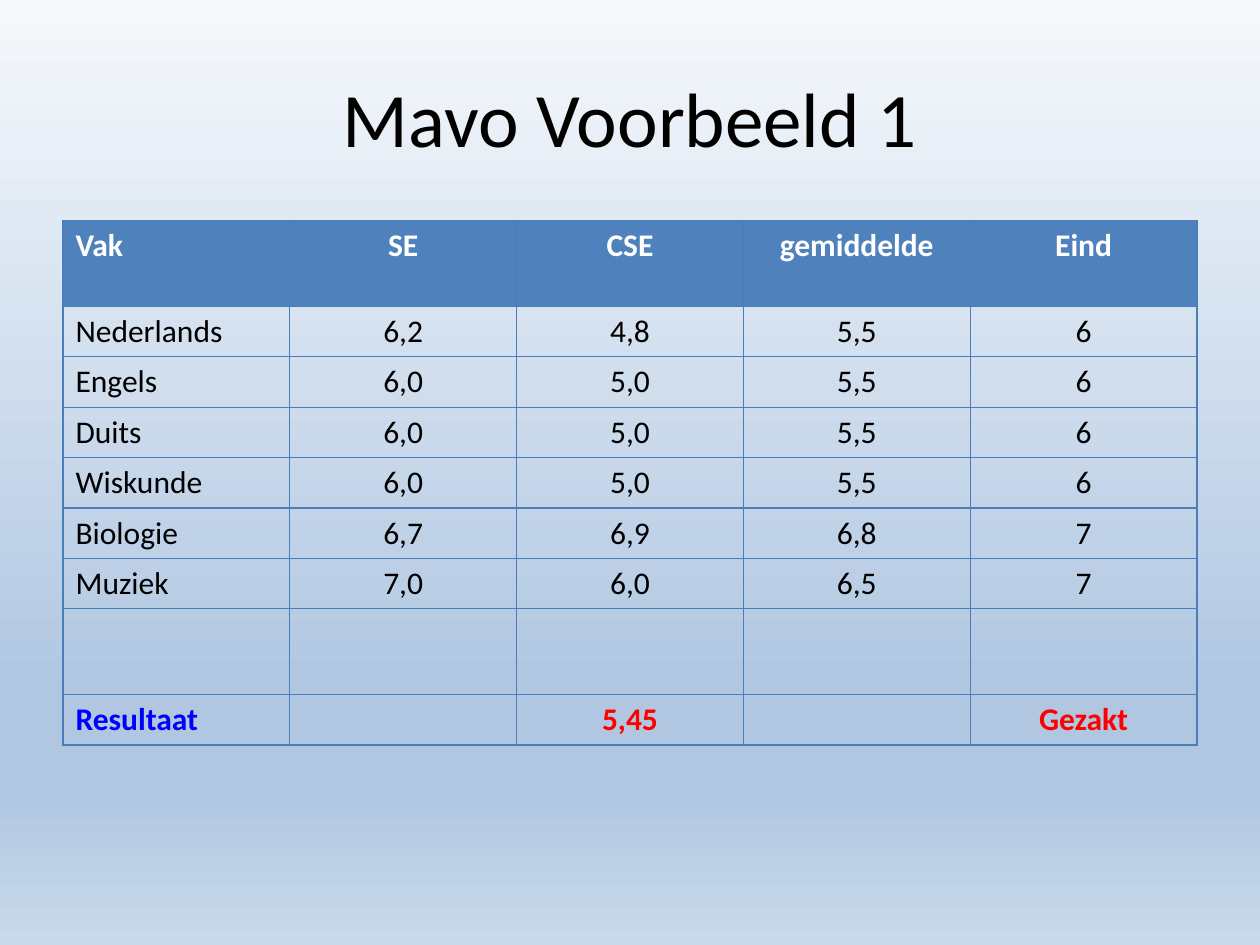
from lxml import etree
from pptx import Presentation
from pptx.dml.color import RGBColor
from pptx.enum.text import MSO_ANCHOR, PP_ALIGN
from pptx.oxml.ns import qn
from pptx.util import Inches, Pt

CENTER, LEFT = PP_ALIGN.CENTER, PP_ALIGN.LEFT
MIDDLE = MSO_ANCHOR.MIDDLE

COLORS = {
    "text": "000000",
    "header_text": "FFFFFF",
    "header_fill": "4F81BD",
    "border": "4A7EBB",
    "label": "0000FF",
    "result": "FF0000",
}
BACKGROUND_STOPS = [(0, "F6F9FC"), (74, "B0C6E1"), (83, "B0C6E1"), (100, "CAD9EB")]

GRADES = [
    ["Vak", "SE", "CSE", "gemiddelde", "Eind"],
    ["Nederlands", "6,2", "4,8", "5,5", "6"],
    ["Engels", "6,0", "5,0", "5,5", "6"],
    ["Duits", "6,0", "5,0", "5,5", "6"],
    ["Wiskunde", "6,0", "5,0", "5,5", "6"],
    ["Biologie", "6,7", "6,9", "6,8", "7"],
    ["Muziek", "7,0", "6,0", "6,5", "7"],
    ["", "", "", "", ""],
    ["Resultaat", "", "5,45", "", "Gezakt"],
]
HEADER_ROW, SPACER_ROW, RESULT_ROW = 0, 7, 8
TALL_ROW, NORMAL_ROW = 0.68, 0.4


def set_background(slide):
    fill = slide.background.fill
    fill.gradient()
    fill.gradient_angle = 270
    stop_list = next(slide.element.iter(qn("a:gsLst")))
    for stop in list(stop_list):
        stop_list.remove(stop)
    for percent, color in BACKGROUND_STOPS:
        stop = etree.SubElement(stop_list, qn("a:gs"), pos=str(percent * 1000))
        etree.SubElement(stop, qn("a:srgbClr"), val=color)


def write_text(text_frame, text, alignment, color, size, bold=False):
    paragraph = text_frame.paragraphs[0]
    paragraph.alignment = alignment
    run = paragraph.add_run()
    run.text = text
    font_format = {"name": "Calibri", "size": Pt(size), "bold": bold}
    for attribute, value in font_format.items():
        setattr(run.font, attribute, value)
    run.font.color.rgb = RGBColor.from_string(COLORS[color])


def add_title(slide, text):
    box = slide.shapes.add_textbox(Inches(0.5), Inches(0.3), Inches(9), Inches(1.25))
    frame_format = {"word_wrap": True, "vertical_anchor": MIDDLE}
    for attribute, value in frame_format.items():
        setattr(box.text_frame, attribute, value)
    write_text(box.text_frame, text, CENTER, "text", 44)


def set_borders(cell):
    properties = cell._tc.get_or_add_tcPr()
    for side in ("lnL", "lnR", "lnT", "lnB"):
        line = etree.SubElement(properties, qn(f"a:{side}"), w=str(Pt(0.75)))
        fill = etree.SubElement(line, qn("a:solidFill"))
        etree.SubElement(fill, qn("a:srgbClr"), val=COLORS["border"])


def text_color(row, column):
    if row == HEADER_ROW:
        return "header_text"
    if row == RESULT_ROW:
        return "label" if column == 0 else "result"
    return "text"


def fill_cell(cell, text, row, column):
    set_borders(cell)
    if row == HEADER_ROW:
        cell.fill.solid()
        cell.fill.fore_color.rgb = RGBColor.from_string(COLORS["header_fill"])
    else:
        cell.fill.background()
    if text:
        alignment = LEFT if column == 0 else CENTER
        bold = row in (HEADER_ROW, RESULT_ROW)
        write_text(cell.text_frame, text, alignment, text_color(row, column), 18, bold)


def add_grade_table(slide):
    heights = [TALL_ROW if row in (HEADER_ROW, SPACER_ROW) else NORMAL_ROW
               for row in range(len(GRADES))]
    table = slide.shapes.add_table(
        len(GRADES), len(GRADES[0]),
        Inches(0.5), Inches(1.75), Inches(9), Inches(sum(heights)),
    ).table
    for attribute, value in {"first_row": False, "horz_banding": False}.items():
        setattr(table, attribute, value)
    for row, (height, texts) in enumerate(zip(heights, GRADES)):
        table.rows[row].height = Inches(height)
        for column, text in enumerate(texts):
            fill_cell(table.cell(row, column), text, row, column)


def main():
    presentation = Presentation()
    presentation.slide_width = Inches(10)
    presentation.slide_height = Inches(7.5)
    slide = presentation.slides.add_slide(presentation.slide_layouts[6])
    set_background(slide)
    add_title(slide, "Mavo Voorbeeld 1")
    add_grade_table(slide)
    presentation.save("out.pptx")


if __name__ == "__main__":
    main()
